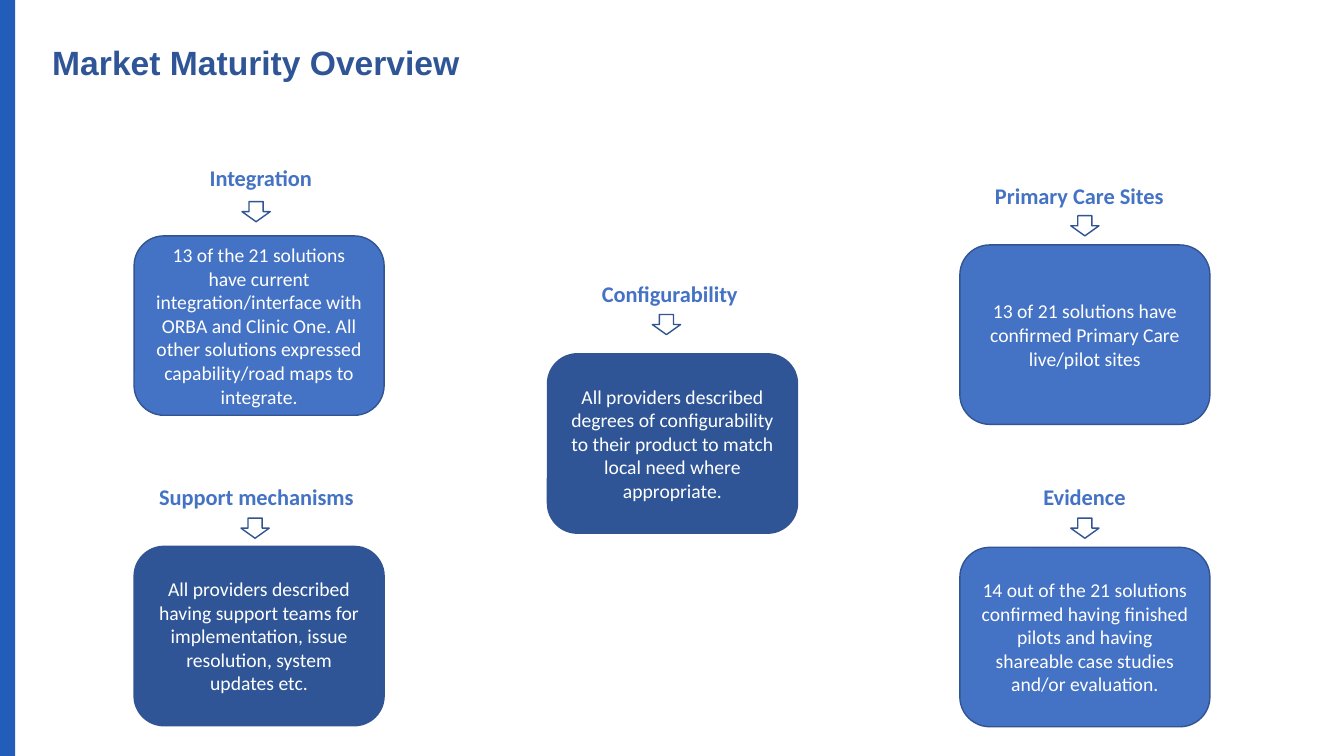
from pptx import Presentation
from pptx.dml.color import RGBColor
from pptx.enum.shapes import MSO_SHAPE
from pptx.enum.text import MSO_ANCHOR, PP_ALIGN
from pptx.util import Inches, Pt

RECT = MSO_SHAPE.RECTANGLE
ROUND = MSO_SHAPE.ROUNDED_RECTANGLE
ARROW = MSO_SHAPE.DOWN_ARROW
MIDDLE = MSO_ANCHOR.MIDDLE
CENTER = PP_ALIGN.CENTER

WHITE = RGBColor(0xFF, 0xFF, 0xFF)
STRIPE = RGBColor(0x21, 0x5D, 0xB9)
DARK = RGBColor(0x2F, 0x55, 0x97)
LIGHT = RGBColor(0x44, 0x72, 0xC4)
EDGE = RGBColor(0x32, 0x54, 0x91)

TITLE = "Market Maturity Overview"
BOX_W, BOX_H = 2.48, 1.78
ARROW_W, ARROW_H = 0.28, 0.2
HEAD_H = 0.37
LEFT, MID, RIGHT = 1.33, 5.43, 9.52

# heading, (x, y, width), arrow (x, y), box (x, y), fill, body
TOPICS = [
    ("Integration", (1.98, 1.58, 1.38), (2.4, 2), (LEFT, 2.34), LIGHT,
     "13 of the 21 solutions have current integration/interface with "
     "ORBA and Clinic One. All other solutions expressed "
     "capability/road maps to integrate."),
    ("Configurability", (5.87, 2.73, 1.78), (6.47, 3.12), (MID, 3.51), DARK,
     "All providers described degrees of configurability to their "
     "product to match local need where appropriate."),
    ("Primary Care Sites", (9.77, 1.76, 1.99), (10.62, 2.14),
     (RIGHT, 2.43), LIGHT,
     "13 of 21 solutions have confirmed Primary Care live/pilot sites"),
    ("Support mechanisms", (1.48, 4.74, 2.22), (2.39, 5.14),
     (LEFT, 5.42), DARK,
     "All providers described having support teams for implementation, "
     "issue resolution, system updates etc."),
    ("Evidence", (10.25, 4.74, 2.22), (10.62, 5.14), (RIGHT, 5.43), LIGHT,
     "14 out of the 21 solutions confirmed having finished pilots and "
     "having shareable case studies and/or evaluation."),
]


def write(shape, text, size, color, face="Calibri", bold=False):
    frame = shape.text_frame
    frame.word_wrap = True
    frame.text = text
    font = frame.paragraphs[0].runs[0].font
    font.name, font.size, font.bold = face, Pt(size), bold
    font.color.rgb = color
    return frame


def label(slide, area, *style, **more):
    box = slide.shapes.add_textbox(*map(Inches, area))
    write(box, *style, **more)


def block(slide, kind, area, fill, edge=None):
    shape = slide.shapes.add_shape(kind, *map(Inches, area))
    shape.shadow.inherit = False
    shape.fill.solid()
    shape.fill.fore_color.rgb = fill
    if edge is None:
        shape.line.fill.background()
    else:
        shape.line.color.rgb = edge
        shape.line.width = Pt(1)
    return shape


def main():
    deck = Presentation()
    deck.slide_width, deck.slide_height = Inches(13.33), Inches(7.5)
    slide = deck.slides.add_slide(deck.slide_layouts[6])

    block(slide, RECT, (0, 0, 0.15, 7.5), STRIPE)
    label(slide, (0.42, 0.37, 6.56, 0.5), TITLE, 24, DARK,
          face="Arial", bold=True)

    for head, spot, tip, place, fill, body in TOPICS:
        box = block(slide, ROUND, (*place, BOX_W, BOX_H), fill, EDGE)
        frame = write(box, body, 14, WHITE)
        frame.vertical_anchor = MIDDLE
        frame.paragraphs[0].alignment = CENTER
        label(slide, (*spot, HEAD_H), head, 16, LIGHT, bold=True)
        block(slide, ARROW, (*tip, ARROW_W, ARROW_H), WHITE, EDGE)

    deck.save("out.pptx")


if __name__ == "__main__":
    main()
